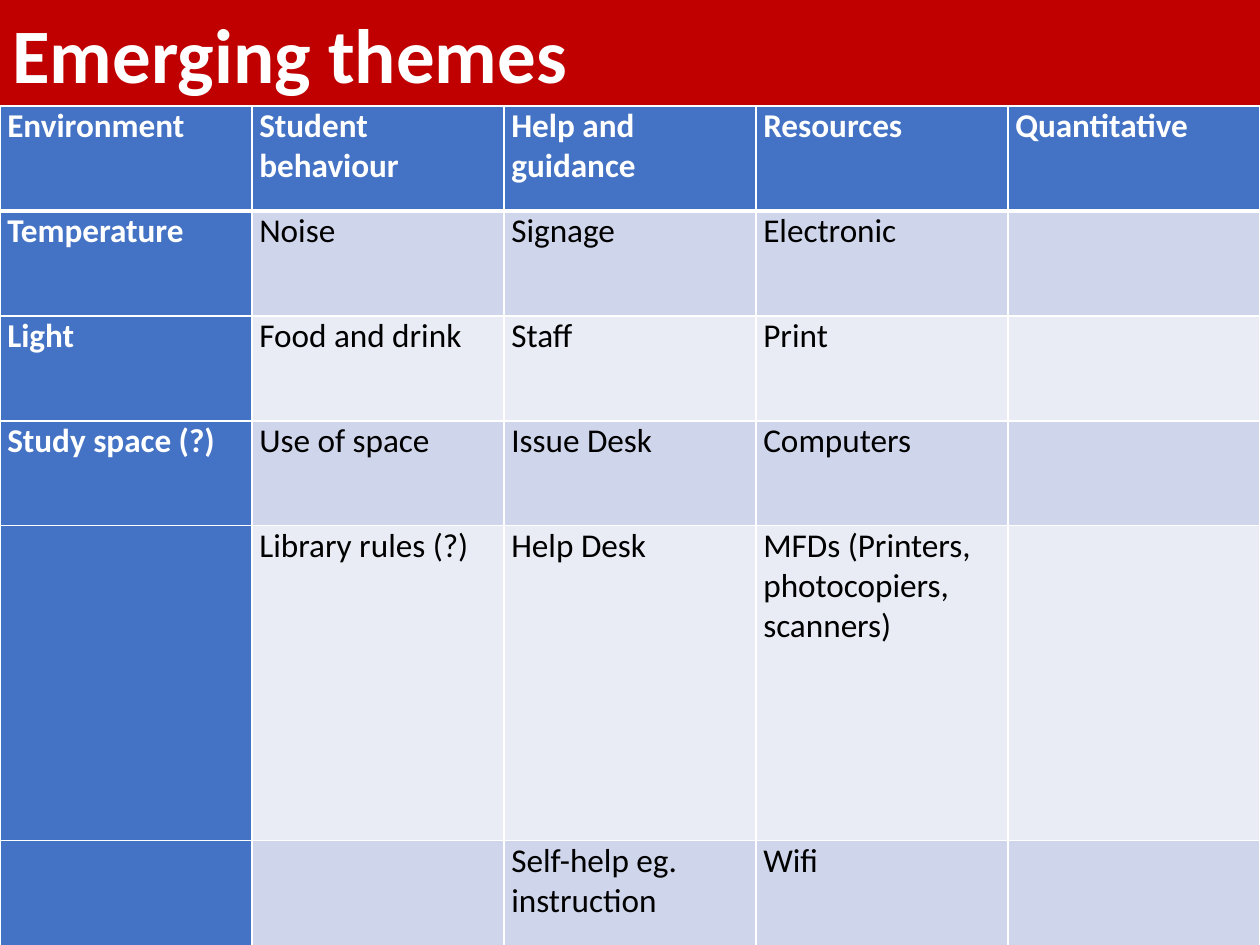
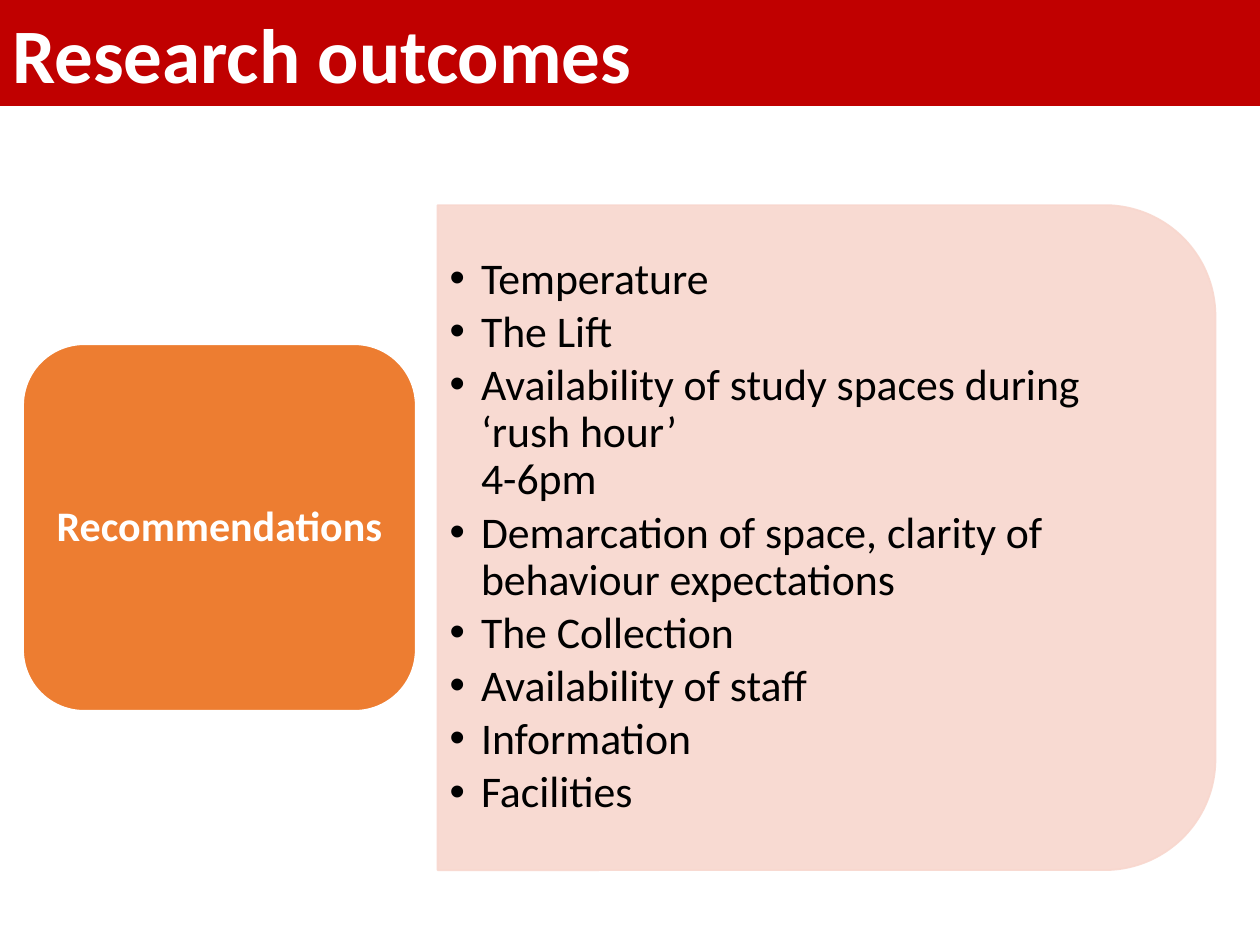
import pptx
import pptx.util
import pptx.dml.color
import pptx.enum.shapes
import pptx.enum.text
import pptx.oxml
import pptx.oxml.ns
import lxml.etree

Pt = pptx.util.Pt
SHAPE = pptx.enum.shapes.MSO_SHAPE
ALIGN = pptx.enum.text.PP_ALIGN
ANCHOR = pptx.enum.text.MSO_ANCHOR
FONT = "Calibri"
UNIT = 60
HUES = {
    "band": "C00000",
    "white": "FFFFFF",
    "black": "000000",
    "head": "4472C4",
    "dark": "CFD5EA",
    "light": "E9EBF5",
    "panel": "F8D7CE",
    "label": "ED7D31",
}
THEMES = [
    ["Environment", "Student behaviour", "Help and guidance", "Resources", "Quantitative"],
    ["Temperature", "Noise", "Signage", "Electronic", ""],
    ["Light", "Food and drink", "Staff", "Print", ""],
    ["Study space (?)", "Use of space", "Issue Desk", "Computers", ""],
    ["", "Library rules (?)", "Help Desk", "MFDs (Printers, photocopiers, scanners)", ""],
    ["", "", "Self-help eg. instruction", "Wifi", ""],
]
SPANS = [1, 1, 1, 1, 3, 1]
POINTS = [
    "Temperature",
    "The Lift",
    "Availability of study spaces during ‘rush hour’ \n4-6pm",
    "Demarcation of space, clarity of behaviour expectations",
    "The Collection",
    "Availability of staff",
    "Information",
    "Facilities",
]


def color(name):
    return pptx.dml.color.RGBColor.from_string(HUES[name])


def add_node(parent, tag, **attrs):
    return lxml.etree.SubElement(parent, pptx.oxml.ns.qn(tag), attrs)


def write(para, text, size, hue, bold=False):
    para.text = text
    font = para.font
    font.name, font.size, font.bold = FONT, Pt(size), bold
    font.color.rgb = color(hue)


def add_block(slide, kind, box, fill, line=None):
    block = slide.shapes.add_shape(kind, *map(Pt, box))
    block.shadow.inherit = False
    block.fill.solid()
    block.fill.fore_color.rgb = color(fill)
    if line:
        block.line.color.rgb = color(line)
        block.line.width = Pt(1)
    else:
        block.line.fill.background()
    return block


def add_text(slide, box):
    frame = slide.shapes.add_textbox(*map(Pt, box)).text_frame
    frame.word_wrap = True
    frame.vertical_anchor = ANCHOR.MIDDLE
    return frame


def add_slide(deck, title):
    slide = deck.slides.add_slide(deck.slide_layouts[6])
    frame = add_block(slide, SHAPE.RECTANGLE, (0, 0, 720, 60.5), "band").text_frame
    frame.vertical_anchor = ANCHOR.TOP
    para = frame.paragraphs[0]
    para.alignment = ALIGN.LEFT
    write(para, title, 44, "white", True)
    return slide


def set_edge(cell, side, width):
    edge = add_node(cell._tc.get_or_add_tcPr(), "a:ln" + side, w=str(Pt(width)))
    add_node(add_node(edge, "a:solidFill"), "a:srgbClr", val=HUES["white"])


def fill_cell(cell, text, row, col):
    head = row == 0 or col == 0
    cell.margin_left = cell.margin_right = Pt(4.2)
    cell.margin_top = cell.margin_bottom = 0
    for side in "LRTB":
        thick = (row, side) in [(0, "B"), (1, "T")]
        set_edge(cell, side, 3 if thick else 1)
    cell.fill.solid()
    cell.fill.fore_color.rgb = color("head" if head else "dark" if row % 2 else "light")
    write(cell.text_frame.paragraphs[0], text, 19, "white" if head else "black", head)


def add_grid(slide, rows, spans):
    wide = 720 / len(rows[0])
    box = (0, 60.5, 720, UNIT * sum(spans))
    grid = slide.shapes.add_table(len(rows), len(rows[0]), *map(Pt, box)).table
    for col in grid.columns:
        col.width = Pt(wide)
    for row, span in zip(grid.rows, spans):
        row.height = Pt(UNIT * span)
    for r, row in enumerate(rows):
        for c, text in enumerate(row):
            fill_cell(grid.cell(r, c), text, r, c)


def add_panel(slide, box):
    panel = add_block(slide, SHAPE.ROUND_2_SAME_RECTANGLE, box, "panel", "panel")
    panel.rotation = 90
    for clr in panel._element.spPr.iter(pptx.oxml.ns.qn("a:srgbClr")):
        add_node(clr, "a:alpha", val="90000")


def add_list(slide, box, items):
    frame = add_text(slide, box)
    for i, item in enumerate(items):
        para = frame.add_paragraph() if i else frame.paragraphs[0]
        para.line_spacing = 0.9
        para.space_after = Pt(3.4)
        props = para._p.get_or_add_pPr()
        props.set("marL", str(Pt(18)))
        props.set("indent", str(-Pt(18)))
        add_node(props, "a:buFont", typeface="Arial")
        add_node(props, "a:buChar", char="•")
        write(para, item, 25, "black")


def add_label(slide, box, text):
    add_block(slide, SHAPE.ROUNDED_RECTANGLE, box, "label", "white")
    left, top, wide, high = box
    frame = add_text(slide, (left + 10, top + 10, wide - 20, high - 20))
    para = frame.paragraphs[0]
    para.alignment = ALIGN.CENTER
    para.line_spacing = 0.9
    write(para, text, 24, "white", True)


def main():
    deck = pptx.Presentation()
    deck.slide_width, deck.slide_height = Pt(720), Pt(540)

    themes = add_slide(deck, "Emerging themes")
    add_grid(themes, THEMES, SPANS)

    results = add_slide(deck, "Research outcomes")
    add_panel(results, (282.3, 85, 380, 444.5))
    add_list(results, (249.8, 135.4, 426.2, 342.7), POINTS)
    add_label(results, (13.2, 196.7, 224.4, 209.5), "Recommendations")

    deck.save("out.pptx")


if __name__ == "__main__":
    main()
